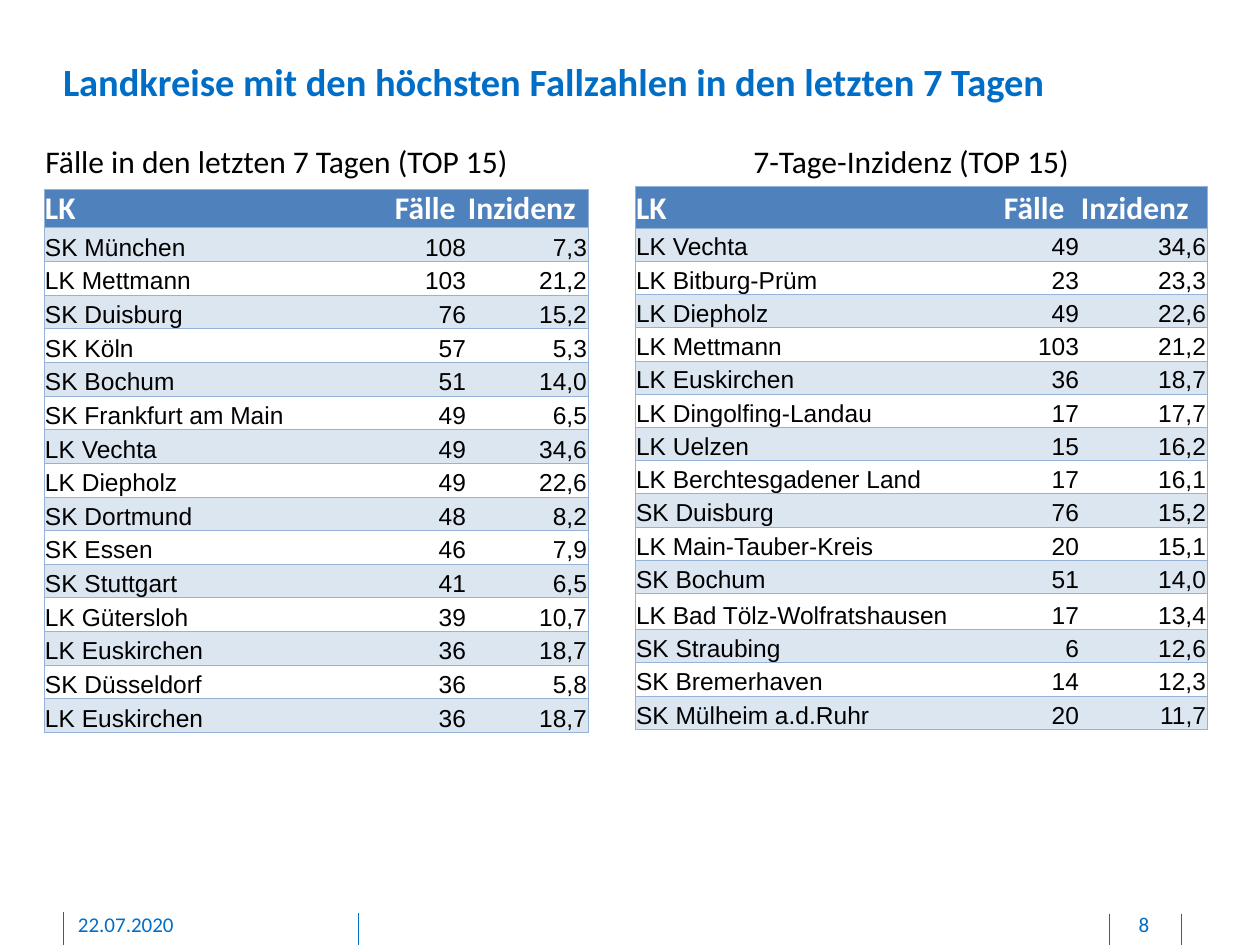
from lxml import etree
from pptx import Presentation
from pptx.dml.color import RGBColor
from pptx.enum.shapes import MSO_CONNECTOR
from pptx.enum.text import MSO_ANCHOR as ANC, MSO_AUTO_SIZE as AUTO, PP_ALIGN as AL
from pptx.oxml import parse_xml
from pptx.oxml.ns import nsdecls, qn
from pptx.util import Emu, Pt

SCALE = 914400 / 126
BLUE, HEAD, BAND, EDGE = "006EC7", "4F81BD", "DCE6F1", "95B3D7"
NO_STYLE = "{2D5ABB26-0587-4C30-8999-92F81FD0307C}"


def px(*vals):
    out = [Emu(round(v * SCALE)) for v in vals]
    return out if len(out) > 1 else out[0]


def write(tf, text, size, color, name="Calibri", bold=False, align=AL.LEFT):
    p = tf.paragraphs[0]
    p.alignment = align
    r = p.add_run()
    r.text = text
    for key, val in {"size": Pt(size), "name": name, "bold": bold}.items():
        setattr(r.font, key, val)
    r.font.color.rgb = RGBColor.from_string(color)


prs = Presentation()
prs.slide_width, prs.slide_height = px(1260, 945)
s = prs.slides.add_slide(prs.slide_layouts[5])

for x, top in [(358, 913), (63, 912), (1181, 914), (1109, 914)]:
    ln = s.shapes.add_connector(MSO_CONNECTOR.STRAIGHT, *px(x, top, x, 945))
    ln.line.color.rgb = RGBColor.from_string(BLUE)
    ln.line.width = Pt(0.5)
    etree.SubElement(ln._element.spPr, qn("a:effectLst"))

title = s.shapes.title
title.left, title.top, title.width, title.height = px(63, 58, 1115, 47)
tf = title.text_frame
fmt = {"margin_left": 0, "margin_top": 0, "margin_right": 0, "margin_bottom": 0,
       "word_wrap": True, "vertical_anchor": ANC.TOP, "auto_size": AUTO.SHAPE_TO_FIT_TEXT}
for key, val in fmt.items():
    setattr(tf, key, val)
write(tf, "Landkreise mit den höchsten Fallzahlen in den letzten 7 Tagen", 22, BLUE, bold=True)

for text, x, w, align in [("22.07.2020", 78, 256, AL.LEFT), ("8", 1110, 68, AL.CENTER)]:
    tf = s.shapes.add_textbox(*px(x, 912, w, 26)).text_frame
    fmt = {"margin_left": 0, "margin_top": 0, "margin_right": 0,
           "margin_bottom": px(6), "word_wrap": True}
    for key, val in fmt.items():
        setattr(tf, key, val)
    write(tf, text, 12, BLUE, align=align)

cases = [
    ("SK München", "108", "7,3"), ("LK Mettmann", "103", "21,2"),
    ("SK Duisburg", "76", "15,2"), ("SK Köln", "57", "5,3"),
    ("SK Bochum", "51", "14,0"), ("SK Frankfurt am Main", "49", "6,5"),
    ("LK Vechta", "49", "34,6"), ("LK Diepholz", "49", "22,6"),
    ("SK Dortmund", "48", "8,2"), ("SK Essen", "46", "7,9"),
    ("SK Stuttgart", "41", "6,5"), ("LK Gütersloh", "39", "10,7"),
    ("LK Euskirchen", "36", "18,7"), ("SK Düsseldorf", "36", "5,8"),
    ("LK Euskirchen", "36", "18,7"),
]
incidence = [
    ("LK Vechta", "49", "34,6"), ("LK Bitburg-Prüm", "23", "23,3"),
    ("LK Diepholz", "49", "22,6"), ("LK Mettmann", "103", "21,2"),
    ("LK Euskirchen", "36", "18,7"), ("LK Dingolfing-Landau", "17", "17,7"),
    ("LK Uelzen", "15", "16,2"), ("LK Berchtesgadener Land", "17", "16,1"),
    ("SK Duisburg", "76", "15,2"), ("LK Main-Tauber-Kreis", "20", "15,1"),
    ("SK Bochum", "51", "14,0"), ("LK Bad Tölz-Wolfratshausen", "17", "13,4"),
    ("SK Straubing", "6", "12,6"), ("SK Bremerhaven", "14", "12,3"),
    ("SK Mülheim a.d.Ruhr", "20", "11,7"),
]
tables = [
    (cases, 44, 189, [350, 73, 121], 37, 505, {}),
    (incidence, 635, 186, [368, 77, 127], 42, 499, {12: 36}),
]
for rows, x, y, widths, head_h, body_h, tall in tables:
    grid = [("LK", "Fälle", "Inzidenz")] + rows
    frame = s.shapes.add_table(len(grid), 3, *px(x, y, sum(widths), head_h + body_h))
    tbl = frame.table
    tbl.first_row = tbl.horz_banding = False
    tbl._tbl.tblPr.find(qn("a:tableStyleId")).text = NO_STYLE
    for col, w in zip(tbl.columns, widths):
        col.width = px(w)
    for i, values in enumerate(grid):
        tbl.rows[i].height = px(tall.get(i, body_h / len(rows)) if i else head_h)
        for j, text in enumerate(values):
            cell = tbl.cell(i, j)
            fmt = {"margin_left": px(1), "margin_top": px(1), "margin_right": px(1),
                   "margin_bottom": 0, "vertical_anchor": ANC.BOTTOM}
            for key, val in fmt.items():
                setattr(cell, key, val)
            for side in ["L"] * (j == 0) + ["R"] * (j == 2) + ["T", "B"]:
                cell._tc.get_or_add_tcPr().append(parse_xml(
                    f'<a:ln{side} {nsdecls("a")} w="6350"><a:solidFill>'
                    f'<a:srgbClr val="{EDGE}"/></a:solidFill></a:ln{side}>'))
            if i % 2 or i == 0:
                cell.fill.solid()
                cell.fill.fore_color.rgb = RGBColor.from_string(BAND if i else HEAD)
            else:
                cell.fill.background()
            if i == 0:
                write(cell.text_frame, text, 18, "FFFFFF", bold=True)
            else:
                write(cell.text_frame, text, 14, "000000", "Arial",
                      align=AL.RIGHT if j else AL.LEFT)

for text, x, w in [("7-Tage-Inzidenz (TOP 15)", 741, 345),
                   ("Fälle in den letzten 7 Tagen (TOP 15)", 33, 494)]:
    tf = s.shapes.add_textbox(*px(x, 136, w, 50)).text_frame
    tf.word_wrap = False
    tf.auto_size = AUTO.SHAPE_TO_FIT_TEXT
    write(tf, text, 18, "000000")

prs.save("out.pptx")
